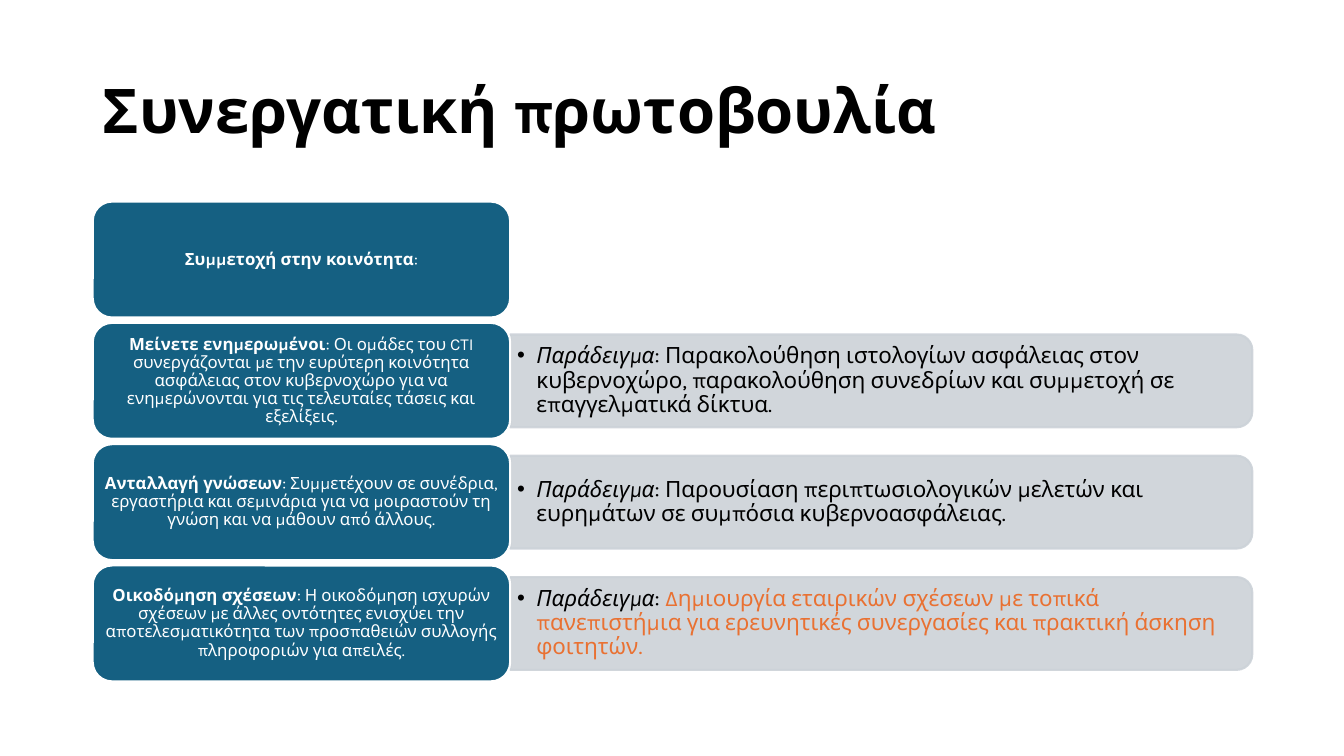
from lxml.etree import SubElement
from pptx import Presentation
from pptx.dml.color import RGBColor
from pptx.enum.shapes import MSO_SHAPE as SHAPE
from pptx.enum.text import MSO_ANCHOR as ANCHOR, PP_ALIGN as ALIGN
from pptx.oxml.ns import qn
from pptx.util import Inches, Pt

THEME = {
    "font": "Karla",
    "title": 44, "topic": 12, "example": 16,
    "black": "000000", "white": "FFFFFF",
    "blue": "156082", "grey": "CCD2D8", "orange": "E97132",
}

# Each row: bold heading, rest of the topic, example, example colour
ROWS = [
    ("Συμμετοχή στην κοινότητα", ":", None, None),
    ("Μείνετε ενημερωμένοι",
     ": Οι ομάδες του CTI συνεργάζονται με την ευρύτερη κοινότητα ασφάλειας στον "
     "κυβερνοχώρο για να ενημερώνονται για τις τελευταίες τάσεις και εξελίξεις.",
     "Παρακολούθηση ιστολογίων ασφάλειας στον κυβερνοχώρο, παρακολούθηση συνεδρίων "
     "και συμμετοχή σε επαγγελματικά δίκτυα.", "black"),
    ("Ανταλλαγή γνώσεων",
     ": Συμμετέχουν σε συνέδρια, εργαστήρια και σεμινάρια για να μοιραστούν τη γνώση "
     "και να μάθουν από άλλους.",
     "Παρουσίαση περιπτωσιολογικών μελετών και ευρημάτων σε συμπόσια "
     "κυβερνοασφάλειας.", "black"),
    ("Οικοδόμηση σχέσεων",
     ": Η οικοδόμηση ισχυρών σχέσεων με άλλες οντότητες ενισχύει την "
     "αποτελεσματικότητα των προσπαθειών συλλογής πληροφοριών για απειλές.",
     "Δημιουργία εταιρικών σχέσεων με τοπικά πανεπιστήμια για ερευνητικές "
     "συνεργασίες και πρακτική άσκηση φοιτητών.", "orange"),
]

LEFT, TOP, PITCH = 0.92, 2, 3.61 / 3
TOPIC_W, TOPIC_H = 4.14, 1.15
PANE_W, PANE_H, TEXT_H = 7.36, 0.92, 0.83


def write(sp, size, runs, align=ALIGN.LEFT, inset=(0.1, 0.05)):
    """Fill a shape with one paragraph of (text, colour, style) runs."""
    tf = sp.text_frame
    x, y = map(Inches, inset)
    frame = {"word_wrap": True, "vertical_anchor": ANCHOR.MIDDLE,
             "margin_left": x, "margin_right": x, "margin_top": y, "margin_bottom": y}
    for name, value in frame.items():
        setattr(tf, name, value)
    p = tf.paragraphs[0]
    p.alignment, p.line_spacing = align, 0.9
    for text, colour, style in runs:
        r = p.add_run()
        r.text = text
        font = {"name": THEME["font"], "size": Pt(THEME[size]), **style}
        for name, value in font.items():
            setattr(r.font, name, value)
        r.font.color.rgb = RGBColor.from_string(THEME[colour])
    return p


def add_panel(kind, box, fill, line):
    sp = s.shapes.add_shape(kind, *map(Inches, box))
    sp.shadow.inherit = False
    sp.fill.solid()
    sp.fill.fore_color.rgb = RGBColor.from_string(THEME[fill])
    sp.line.color.rgb = RGBColor.from_string(THEME[line])
    sp.line.width = Pt(1.5)
    return sp


prs = Presentation()
prs.slide_width, prs.slide_height = Inches(13.33), Inches(7.5)
s = prs.slides.add_slide(prs.slide_layouts[6])

# Title
title = s.shapes.add_textbox(*map(Inches, (LEFT, 0.4, 11.5, 1.45)))
write(title, "title", [("Συνεργατική πρωτοβουλία", "black", {"bold": True})])

for i, (heading, detail, example, colour) in enumerate(ROWS):
    top = TOP + i * PITCH
    middle = top + TOPIC_H / 2
    right = LEFT + TOPIC_W

    if example:
        # Example pane, turned so that its rounded corners face right
        pane = add_panel(SHAPE.ROUND_2_SAME_RECTANGLE,
                         (right + (PANE_W - PANE_H) / 2, middle - PANE_W / 2,
                          PANE_H, PANE_W), "grey", "grey")
        pane.rotation = 90
        for clr in pane._element.spPr.iter(qn("a:srgbClr")):
            SubElement(clr, qn("a:alpha"), val="90000")

        # Bulleted example text
        note = s.shapes.add_textbox(
            *map(Inches, (right, middle - TEXT_H / 2, 7.32, TEXT_H)))
        p = write(note, "example",
                  [("Παράδειγμα", "black", {"italic": True}),
                   (": ", "black", {}), (example, colour, {})],
                  inset=(0.07, 0.03))
        pPr = p._p.get_or_add_pPr()
        pPr.set("marL", str(Inches(0.19)))
        pPr.set("indent", str(-Inches(0.19)))
        SubElement(pPr, qn("a:buFont"), typeface="Arial")
        SubElement(pPr, qn("a:buChar"), char="•")

    # Topic block
    topic = add_panel(SHAPE.ROUNDED_RECTANGLE, (LEFT, top, TOPIC_W, TOPIC_H),
                      "blue", "white")
    write(topic, "topic",
          [(heading, "white", {"bold": True}), (detail, "white", {})],
          ALIGN.CENTER, (0.05, 0.03))

prs.save("out.pptx")
